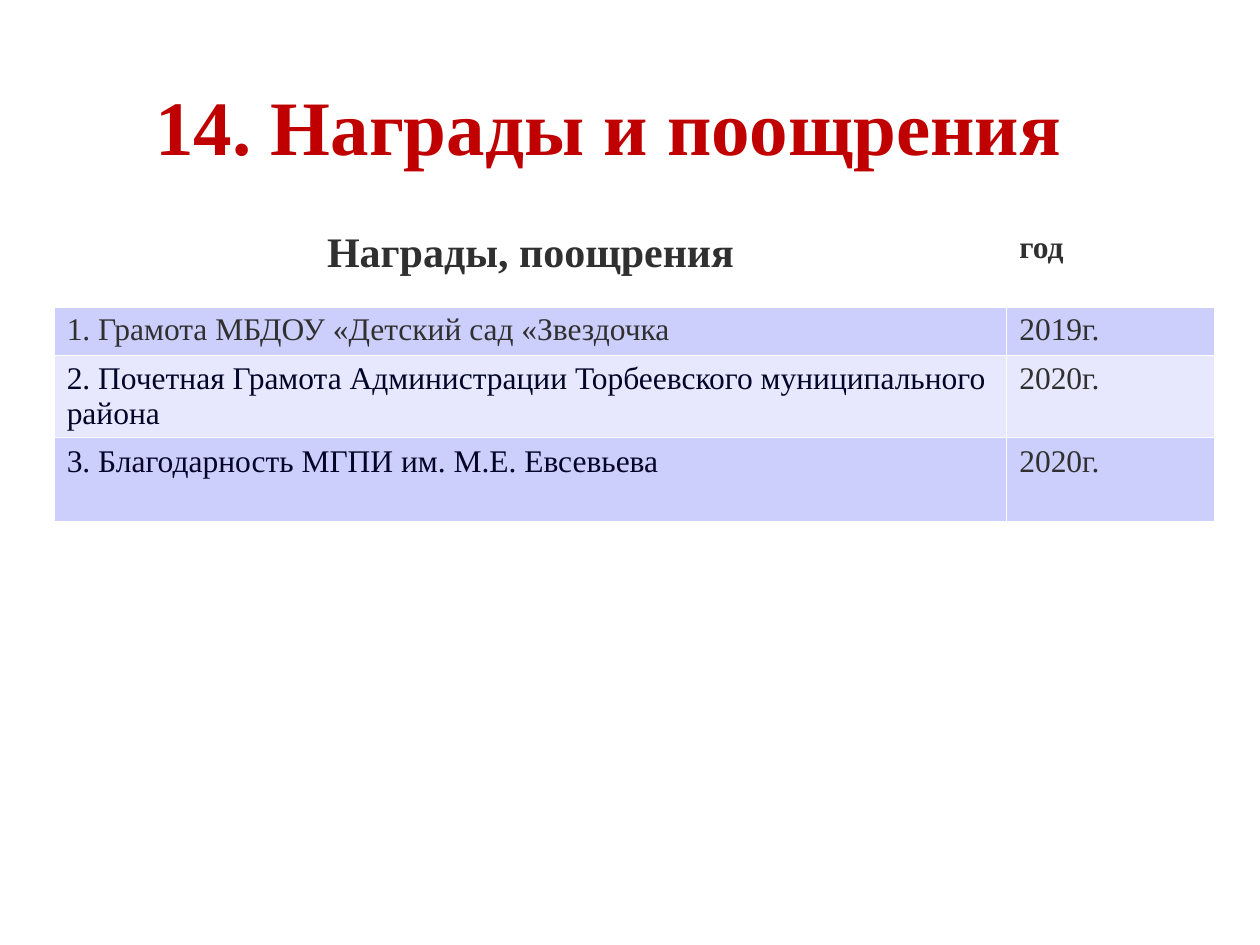
from dataclasses import dataclass

from lxml import etree
from pptx import Presentation
from pptx.dml.color import RGBColor
from pptx.enum.text import MSO_ANCHOR, MSO_AUTO_SIZE, PP_ALIGN
from pptx.oxml.ns import qn
from pptx.util import Inches, Pt

TOP = MSO_ANCHOR.TOP
NO_FIT = MSO_AUTO_SIZE.NONE
LEFT, CENTER = PP_ALIGN.LEFT, PP_ALIGN.CENTER
TITLE_ONLY = 5


@dataclass(frozen=True)
class Theme:
    font: str = "Times New Roman"
    title: str = "C00000"
    text: str = "303030"
    dark: str = "020528"
    bands: tuple = ("CCCEFB", "E7E8FD")
    border: str = "FFFFFF"
    title_size: int = 44
    head_size: int = 24
    body_size: int = 18


THEME = Theme()

HEADER = ("Награды, поощрения", "год")
AWARDS = [
    ("1. Грамота МБДОУ «Детский сад «Звездочка", "2019г.", THEME.text),
    ("2. Почетная Грамота Администрации Торбеевского муниципального района",
     "2020г.", THEME.dark),
    ("3. Благодарность МГПИ им. М.Е. Евсевьева", "2020г.", THEME.dark),
]
COL_WIDTHS = (7.56, 1.65)
ROW_HEIGHTS = (0.65, 0.39, 0.65, 0.67)


def add_run(tf, text, size, color, bold=False, align=LEFT):
    p = tf.paragraphs[0]
    p.alignment = align
    r = p.add_run()
    r.text = text
    r.font.name = THEME.font
    r.font.size = Pt(size)
    r.font.bold = bold
    r.font.color.rgb = RGBColor.from_string(color)


def set_borders(cell, bottom=1):
    """Borders go before the fill in the cell properties."""
    tcPr = cell._tc.get_or_add_tcPr()
    sides = (("a:lnL", 1), ("a:lnR", 1), ("a:lnT", 1), ("a:lnB", bottom))
    for tag, width in sides:
        ln = etree.SubElement(tcPr, qn(tag), w=str(Pt(width)))
        fill = etree.SubElement(ln, qn("a:solidFill"))
        etree.SubElement(fill, qn("a:srgbClr"), val=THEME.border)


def place_title(s, x, y, w, h):
    sp = s.shapes.title
    sp.left, sp.top, sp.width, sp.height = x, y, w, h
    tf = sp.text_frame
    tf.word_wrap = True
    tf.auto_size = NO_FIT
    tf.vertical_anchor = TOP
    tf.margin_left, tf.margin_top = Inches(0.15), Inches(0.1)
    add_run(tf, "14. Награды и поощрения", THEME.title_size, THEME.title,
            bold=True, align=CENTER)


def place_awards(s, x, y, w, h):
    frame = s.shapes.add_table(len(ROW_HEIGHTS), len(COL_WIDTHS), x, y, w, h)
    table = frame.table
    for col, share in zip(table.columns, COL_WIDTHS):
        col.width = int(w * share / sum(COL_WIDTHS))
    for row, share in zip(table.rows, ROW_HEIGHTS):
        row.height = int(h * share / sum(ROW_HEIGHTS))

    # Header row
    styles = ((THEME.head_size, CENTER), (THEME.body_size, LEFT))
    for c, (text, (size, align)) in enumerate(zip(HEADER, styles)):
        cell = table.cell(0, c)
        set_borders(cell, bottom=3)
        cell.fill.background()
        add_run(cell.text_frame, text, size, THEME.text, bold=True, align=align)

    # Banded award rows
    for i, (award, year, color) in enumerate(AWARDS):
        for c, (text, ink) in enumerate(((award, color), (year, THEME.text))):
            cell = table.cell(i + 1, c)
            set_borders(cell)
            cell.fill.solid()
            cell.fill.fore_color.rgb = RGBColor.from_string(THEME.bands[i % 2])
            add_run(cell.text_frame, text, THEME.body_size, ink)


def main():
    prs = Presentation()
    prs.slide_width, prs.slide_height = Inches(10), Inches(7.5)
    s = prs.slides.add_slide(prs.slide_layouts[TITLE_ONLY])
    place_title(s, Inches(0.59), Inches(0.52), Inches(8.43), Inches(6.2))
    place_awards(s, Inches(0.43), Inches(1.78), Inches(sum(COL_WIDTHS)),
                 Inches(sum(ROW_HEIGHTS)))
    prs.save("out.pptx")


if __name__ == "__main__":
    main()
